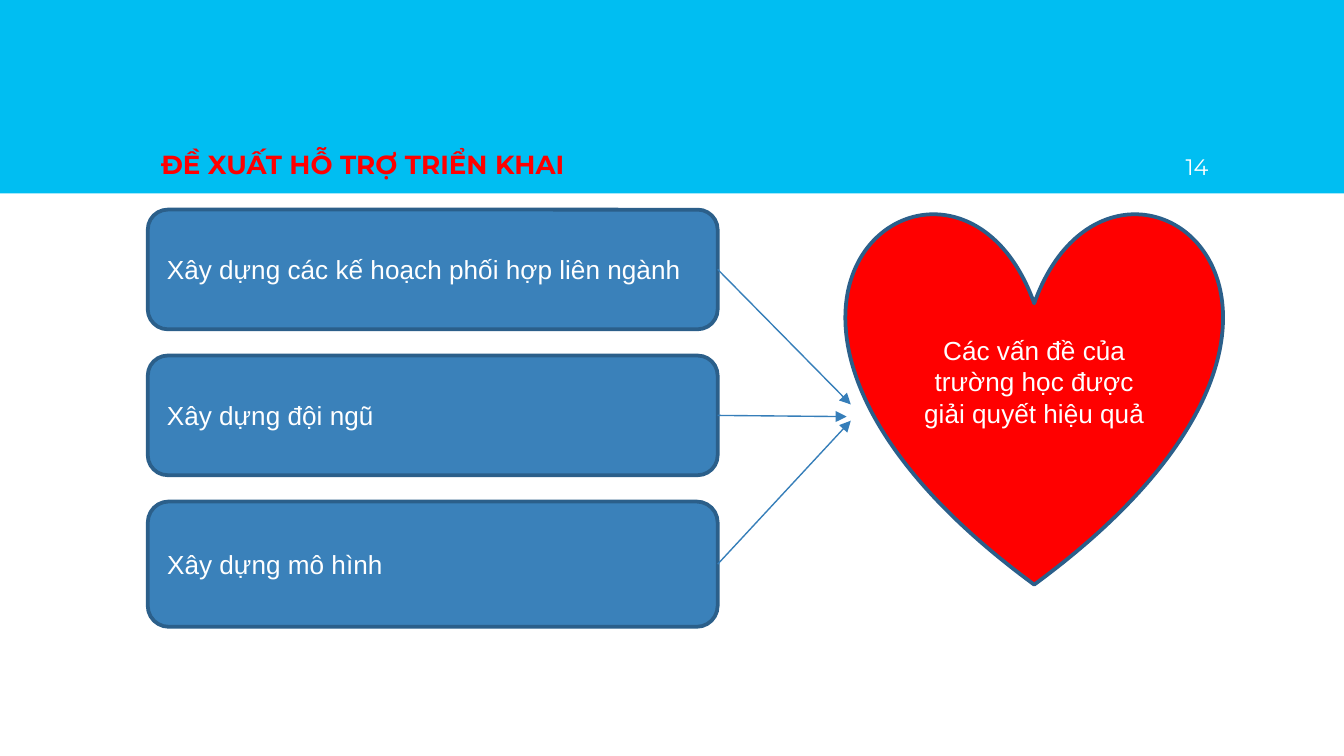
from dataclasses import dataclass

import pptx
import pptx.dml.color
import pptx.enum.shapes
import pptx.enum.text
import pptx.oxml
import pptx.oxml.ns
import pptx.util

Pt = pptx.util.Pt
SHAPE = pptx.enum.shapes.MSO_SHAPE
ALIGN = pptx.enum.text.PP_ALIGN
ANCHOR = pptx.enum.text.MSO_ANCHOR


@dataclass(frozen=True)
class Theme:
    band: str = "00BEF2"
    red: str = "FF0000"
    white: str = "FFFFFF"
    box: str = "3A81BA"
    outline: str = "2B5F8A"
    arrow: str = "367EB9"
    heading_font: str = "Montserrat"
    body_font: str = "Arial"
    text_size: float = 14
    number_size: float = 12


THEME = Theme()


def rgb(value):
    return pptx.dml.color.RGBColor.from_string(value)


def write(tf, text, font, size, color, align=ALIGN.LEFT, bold=False):
    tf.word_wrap = True
    p = tf.paragraphs[0]
    p.alignment = align
    r = p.add_run()
    r.text = text
    r.font.name = font
    r.font.size = Pt(size)
    r.font.bold = bold
    r.font.color.rgb = rgb(color)


def add_filled(s, kind, box, fill, outline=None):
    sp = s.shapes.add_shape(kind, *map(Pt, box))
    sp.shadow.inherit = False
    sp.fill.solid()
    sp.fill.fore_color.rgb = rgb(fill)
    if outline:
        sp.line.color.rgb = rgb(outline)
        sp.line.width = Pt(2)
    else:
        sp.line.fill.background()
    return sp


def add_node(s, kind, box, fill, text, align):
    sp = add_filled(s, kind, box, fill, THEME.outline)
    sp.text_frame.vertical_anchor = ANCHOR.MIDDLE
    write(sp.text_frame, text, THEME.body_font, THEME.text_size, THEME.white, align)


def add_label(s, box, *style, **options):
    """Add header text that sits on the bottom of its box."""
    tf = s.shapes.add_textbox(*map(Pt, box)).text_frame
    tf.margin_left = tf.margin_right = tf.margin_top = tf.margin_bottom = Pt(7.2)
    tf.vertical_anchor = ANCHOR.BOTTOM
    write(tf, *style, **options)


def add_arrow(s, start, end):
    line = s.shapes.add_connector(
        pptx.enum.shapes.MSO_CONNECTOR.STRAIGHT, *map(Pt, start + end))
    line.line.color.rgb = rgb(THEME.arrow)
    line.line.width = Pt(0.75)
    tail = pptx.oxml.parse_xml(
        f'<a:tailEnd {pptx.oxml.ns.nsdecls("a")} type="triangle"/>')
    line.line._get_or_add_ln().append(tail)
    effects = pptx.oxml.parse_xml(f'<a:effectLst {pptx.oxml.ns.nsdecls("a")}/>')
    line._element.spPr.append(effects)


def add_header(s, box, title, number):
    x, y, w, h = box
    add_filled(s, SHAPE.RECTANGLE, box, THEME.band)
    label_h, margin = 52.6, 79.2
    top = y + h - label_h
    add_label(s, (x + margin, top, w - 2 * margin, label_h), title,
              THEME.heading_font, THEME.text_size, THEME.red, bold=True)
    add_label(s, (x + w - 108.7, top, 43.2, label_h), number,
              THEME.heading_font, THEME.number_size, THEME.white, ALIGN.RIGHT)


def add_proposals(s, box, texts):
    """Stack the proposals and return the middle of each right edge."""
    x, y, w, h = box
    pitch, box_h = 78.2, 64.1
    starts = []
    for i, text in enumerate(texts):
        top = y + i * pitch
        height = y + h - top if i == len(texts) - 1 else box_h
        add_node(s, SHAPE.ROUNDED_RECTANGLE, (x, top, w, height), THEME.box,
                 text, ALIGN.LEFT)
        starts.append((x + w, top + height / 2))
    return starts


def add_outcome(s, box, text, starts):
    """Draw the heart and the arrows that meet at its left side."""
    x, y, w, h = box
    add_node(s, SHAPE.HEART, box, THEME.red, text, ALIGN.CENTER)
    ends = [(2.2, 104.4), (0, 110.9), (2.2, 113.1)]
    for start, (dx, dy) in zip(starts, ends):
        add_arrow(s, start, (x + dx, y + dy))


def main():
    prs = pptx.Presentation()
    prs.slide_width, prs.slide_height = Pt(720), Pt(405)
    s = prs.slides.add_slide(prs.slide_layouts[6])
    add_header(s, (0, 0, 720, 103.7), "ĐỀ XUẤT HỖ TRỢ TRIỂN KHAI", "14")
    starts = add_proposals(s, (79.2, 112.3, 305.3, 223.5), [
        "Xây dựng các kế hoạch phối hợp liên ngành",
        "Xây dựng đội ngũ",
        "Xây dựng mô hình",
    ])
    add_outcome(s, (453.6, 112.3, 200.9, 200.9),
                "Các vấn đề của trường học được giải quyết hiệu quả", starts)
    prs.save("out.pptx")


if __name__ == "__main__":
    main()
